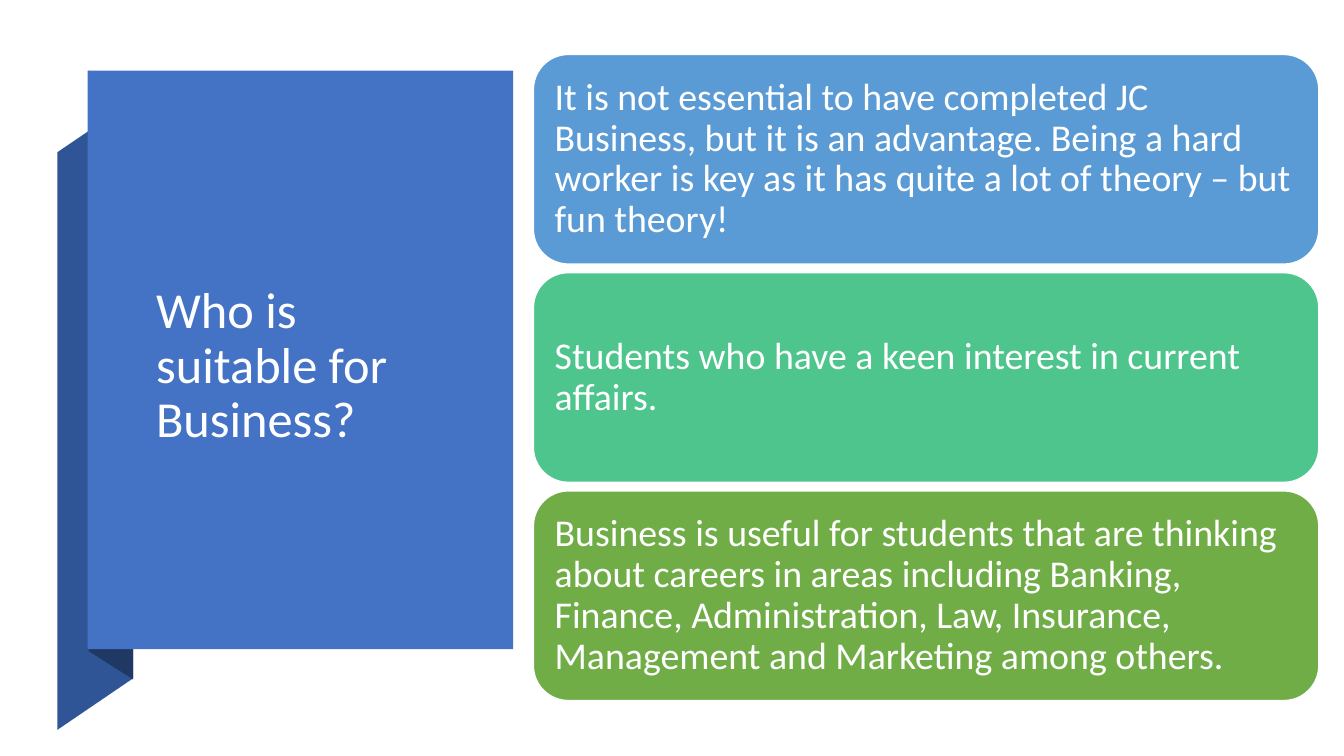
from dataclasses import dataclass

from pptx import Presentation
from pptx.dml.color import RGBColor as Rgb
from pptx.enum.shapes import MSO_SHAPE as Shape
from pptx.enum.text import MSO_ANCHOR as Anchor, PP_ALIGN as Align
from pptx.shapes.autoshape import Shape as Auto
from pptx.slide import Slide
from pptx.text.text import TextFrame as Frame
from pptx.util import Inches, Pt


@dataclass(frozen=True)
class Theme:
    font: str = "Calibri"
    white: str = "FFFFFF"
    panel: str = "4472C4"
    fold: str = "2F5597"
    shade: str = "203864"
    title: int = 36
    body: int = 27


@dataclass(frozen=True)
class Card:
    text: str
    fill: str


@dataclass(frozen=True)
class Fold:
    fill: str
    points: tuple[tuple[float, float], ...]


THEME = Theme()

FOLDS = (
    Fold(THEME.fold, ((0.57, 7.24), (1.32, 6.73), (1.32, 1), (0.57, 1.51))),
    Fold(THEME.shade, ((0.88, 6.46), (1.32, 6.74), (1.32, 0.99), (0.88, 0.7))),
)

CARDS = (
    Card("It is not essential to have completed JC Business, but it is an "
         "advantage. Being a hard worker is key as it has quite a lot of "
         "theory – but fun theory!", "5B9BD5"),
    Card("Students who have a keen interest in current affairs.", "4DC58D"),
    Card("Business is useful for students that are thinking about careers in "
         "areas including Banking, Finance, Administration, Law, Insurance, "
         "Management and Marketing among others.", "70AD47"),
)
LEFT, TOP, WIDTH, HEIGHT = 5.29, 0.54, 7.79, 2.08
LAST = 4.87
STEP = (LAST - TOP) / (len(CARDS) - 1)
INSET, RIGHT = 0.11, 0.13


def paint(shape: Auto, fill: str) -> None:
    shape.shadow.inherit = False
    shape.fill.solid()
    shape.fill.fore_color.rgb = Rgb.from_string(fill)
    shape.line.fill.background()


def write(frame: Frame, text: str, size: int) -> None:
    frame.text = text
    frame.word_wrap = True
    frame.vertical_anchor = Anchor.MIDDLE
    para = frame.paragraphs[0]
    para.alignment = Align.LEFT
    para.line_spacing = 0.9
    font = para.runs[0].font
    font.name = THEME.font
    font.size = Pt(size)
    font.color.rgb = Rgb.from_string(THEME.white)


def add_fold(slide: Slide, fold: Fold) -> None:
    first, *rest = [(Inches(x), Inches(y)) for x, y in fold.points]
    pen = slide.shapes.build_freeform(*first)
    pen.add_line_segments(rest, close=True)
    paint(pen.convert_to_shape(), fold.fill)


def add_panel(slide: Slide) -> None:
    panel = slide.shapes.add_shape(
        Shape.RECTANGLE, Inches(0.87), Inches(0.7), Inches(4.22), Inches(5.74))
    paint(panel, THEME.panel)
    title = slide.shapes.add_textbox(
        Inches(1.45), Inches(1.67), Inches(3.01), Inches(3.94))
    write(title.text_frame, "Who is suitable for Business?", THEME.title)


def add_card(slide: Slide, card: Card, top: float) -> None:
    box = slide.shapes.add_shape(
        Shape.ROUNDED_RECTANGLE,
        Inches(LEFT), Inches(top), Inches(WIDTH), Inches(HEIGHT))
    paint(box, card.fill)
    box.line.color.rgb = Rgb.from_string(THEME.white)
    box.line.width = Pt(1)
    frame = box.text_frame
    frame.margin_left, frame.margin_right = Inches(INSET), Inches(RIGHT)
    frame.margin_top = frame.margin_bottom = Inches(INSET)
    write(frame, card.text, THEME.body)


def main() -> None:
    deck = Presentation()
    deck.slide_width, deck.slide_height = Inches(13.33), Inches(7.5)
    slide = deck.slides.add_slide(deck.slide_layouts[6])
    for fold in FOLDS:
        add_fold(slide, fold)
    add_panel(slide)
    for row, card in enumerate(CARDS):
        add_card(slide, card, TOP + row * STEP)
    deck.save("out.pptx")


if __name__ == "__main__":
    main()
